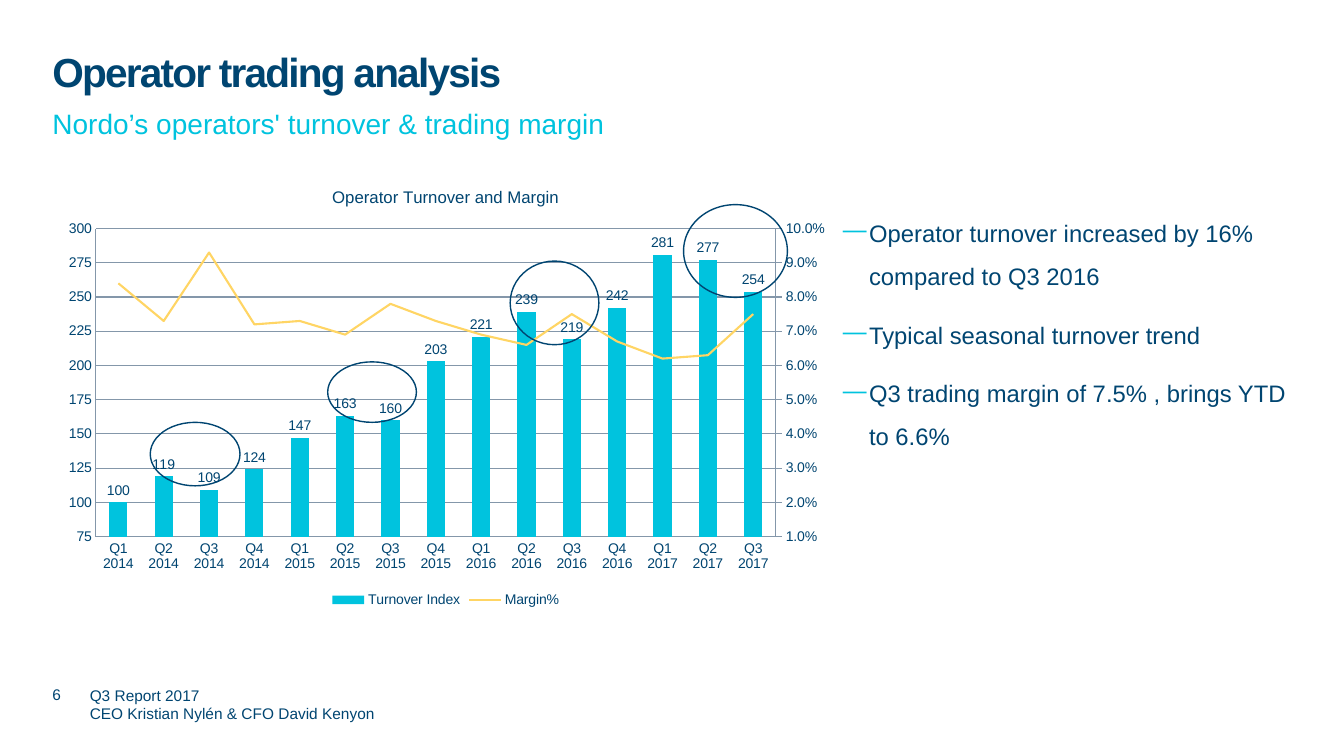
from dataclasses import dataclass

from pptx import Presentation
from pptx.chart.data import CategoryChartData
from pptx.dml.color import RGBColor
from pptx.enum.chart import XL_CHART_TYPE as ChartType, XL_LABEL_POSITION as LabelPosition
from pptx.enum.chart import XL_LEGEND_POSITION as LegendPosition, XL_MARKER_STYLE as MarkerStyle
from pptx.enum.chart import XL_TICK_MARK as TickMark
from pptx.enum.shapes import MSO_SHAPE as Preset
from pptx.enum.text import MSO_ANCHOR as Anchor
from pptx.oxml import parse_xml
from pptx.oxml.ns import nsdecls, qn
from pptx.util import Inches, Pt


@dataclass(frozen=True)
class Theme:
    font: str = "Arial"
    navy: str = "004571"
    cyan: str = "00C3DE"
    yellow: str = "FFD564"
    grid: str = "8497AA"
    title: float = 29
    subtitle: float = 20
    body: float = 17
    chart_title: float = 12
    footer: float = 11
    chart: float = 10


theme = Theme()


def set_font(font, size, color=theme.navy, bold=False):
    font.name = theme.font
    font.size = Pt(size)
    font.bold = bold
    font.color.rgb = RGBColor.from_string(color)


def add_text(text, box, size, color=theme.navy, bold=False, anchor=Anchor.TOP,
             line_spacing=None, space_after=0, tracking=None, bullet=None):
    """Add a text box with one paragraph per line of text."""
    frame = slide.shapes.add_textbox(*map(Inches, box)).text_frame
    frame.word_wrap = True
    frame.vertical_anchor = anchor
    frame.margin_left = frame.margin_right = frame.margin_top = frame.margin_bottom = 0
    for index, line in enumerate(text.split("\n")):
        paragraph = frame.paragraphs[0] if index == 0 else frame.add_paragraph()
        paragraph.line_spacing = line_spacing
        paragraph.space_after = Pt(space_after)
        if bullet:
            properties = paragraph._p.get_or_add_pPr()
            properties.set("marL", str(Inches(0.26)))
            properties.set("indent", str(Inches(-0.26)))
            properties.append(parse_xml(
                f'<a:buClr {nsdecls("a")}><a:srgbClr val="{theme.cyan}"/></a:buClr>'))
            properties.append(parse_xml(f'<a:buChar {nsdecls("a")} char="{bullet}"/>'))
        run = paragraph.add_run()
        run.text = line
        set_font(run.font, size, color, bold)
        if tracking:
            run._r.get_or_add_rPr().set("spc", str(round(tracking * 100)))


presentation = Presentation()
presentation.slide_width = Inches(13.33)
presentation.slide_height = Inches(7.5)
slide = presentation.slides.add_slide(presentation.slide_layouts[6])

# Headings, bullets and footer
add_text("Operator trading analysis", (0.52, 0.52, 10.5, 0.37), theme.title,
         bold=True, line_spacing=0.9, tracking=-1.3)
add_text("Nordo’s operators' turnover & trading margin", (0.52, 1.02, 10.5, 0.52),
         theme.subtitle, color=theme.cyan, line_spacing=Pt(26.7))
add_text("Operator turnover increased by 16% compared to Q3 2016\n"
         "Typical seasonal turnover trend\n"
         "Q3 trading margin of 7.5% , brings YTD to 6.6%",
         (8.36, 2.03, 4.44, 4.46), theme.body, line_spacing=1.5, space_after=11.3, bullet="―")
add_text("6", (0.52, 6.77, 0.37, 0.21), theme.footer, anchor=Anchor.BOTTOM)
add_text("Q3 Report 2017\nCEO Kristian Nylén & CFO David Kenyon",
         (0.89, 6.96, 5.25, 0.21), theme.footer, anchor=Anchor.BOTTOM)

# Turnover columns and margin line
quarters = [f"Q{quarter} {year}" for year in range(2014, 2018) for quarter in range(1, 5)][:15]
turnover = [100, 119, 109, 124, 147, 163, 160, 203, 221, 239, 219, 242, 281, 277, 254]
margin = [0.084, 0.073, 0.093, 0.072, 0.073, 0.069, 0.078, 0.073,
          0.069, 0.066, 0.075, 0.067, 0.062, 0.063, 0.075]
chart_data = CategoryChartData()
chart_data.categories = quarters
chart_data.add_series("Turnover Index", turnover, number_format="0")
chart_data.add_series("Margin%", margin, number_format="0.0%")
chart = slide.shapes.add_chart(ChartType.COLUMN_CLUSTERED, Inches(0.52), Inches(1.68),
                               Inches(7.8), Inches(4.39), chart_data).chart
set_font(chart.font, theme.chart)
chart.has_title = True
chart.chart_title.include_in_layout = False
chart_title = chart.chart_title.text_frame
chart_title.text = "Operator Turnover and Margin"
set_font(chart_title.paragraphs[0].runs[0].font, theme.chart_title)
chart.has_legend = True
chart.legend.position = LegendPosition.BOTTOM
chart.legend.include_in_layout = False
set_font(chart.legend.font, theme.chart)

value_axis = chart.value_axis
value_axis.minimum_scale, value_axis.maximum_scale, value_axis.major_unit = 75, 300, 25
value_axis.tick_labels.number_format = "0"
value_axis.tick_labels.number_format_is_linked = False
value_axis.has_major_gridlines = True
for axis in (chart.category_axis, value_axis):
    axis.major_tick_mark = axis.minor_tick_mark = TickMark.NONE
    set_font(axis.tick_labels.font, theme.chart)
for line in (chart.category_axis.format.line, value_axis.format.line,
             value_axis.major_gridlines.format.line):
    line.color.rgb = RGBColor.from_string(theme.grid)
    line.width = Pt(0.75)

columns = chart.plots[0]
columns.gap_width = 150
columns.vary_by_categories = False
turnover_series = columns.series[0]
turnover_series.format.fill.solid()
turnover_series.format.fill.fore_color.rgb = RGBColor.from_string(theme.cyan)
labels = turnover_series.data_labels
labels.show_value = True
labels.number_format = "0"
labels.number_format_is_linked = False
labels.position = LabelPosition.OUTSIDE_END
set_font(labels.font, theme.chart)

# The margin series moves to a line plot on its own right-hand axis
plot_area = chart._chartSpace.chart.plotArea
bar_chart = plot_area.find(qn("c:barChart"))
margin_element = bar_chart.findall(qn("c:ser"))[1]
for bar_setting in margin_element.findall(qn("c:invertIfNegative")):
    margin_element.remove(bar_setting)
line_chart = parse_xml(
    f'<c:lineChart {nsdecls("c")}><c:grouping val="standard"/><c:varyColors val="0"/>'
    '<c:marker val="1"/><c:axId val="5001"/><c:axId val="5002"/></c:lineChart>')
line_chart.insert(2, margin_element)
bar_chart.addnext(line_chart)
right_axis = parse_xml(
    f'<c:valAx {nsdecls("c", "a")}><c:axId val="5002"/><c:scaling>'
    '<c:orientation val="minMax"/><c:max val="0.1"/><c:min val="0.01"/></c:scaling>'
    '<c:delete val="0"/><c:axPos val="r"/><c:numFmt formatCode="0.0%" sourceLinked="0"/>'
    '<c:majorTickMark val="out"/><c:minorTickMark val="none"/><c:tickLblPos val="nextTo"/>'
    f'<c:spPr><a:ln w="9525"><a:solidFill><a:srgbClr val="{theme.grid}"/></a:solidFill></a:ln>'
    '</c:spPr><c:crossAx val="5001"/><c:crosses val="max"/><c:crossBetween val="between"/>'
    '<c:majorUnit val="0.01"/></c:valAx>')
hidden_axis = parse_xml(
    f'<c:catAx {nsdecls("c")}><c:axId val="5001"/><c:scaling><c:orientation val="minMax"/>'
    '</c:scaling><c:delete val="1"/><c:axPos val="b"/><c:majorTickMark val="none"/>'
    '<c:minorTickMark val="none"/><c:tickLblPos val="nextTo"/><c:crossAx val="5002"/>'
    '<c:crosses val="autoZero"/></c:catAx>')
plot_area.find(qn("c:valAx")).addnext(right_axis)
right_axis.addnext(hidden_axis)
margin_series = chart.plots[1].series[0]
margin_series.smooth = False
margin_series.marker.style = MarkerStyle.NONE
margin_series.format.line.color.rgb = RGBColor.from_string(theme.yellow)
margin_series.format.line.width = Pt(1.5)

for layout in plot_area.findall(qn("c:layout")):
    plot_area.remove(layout)
plot_area.insert(0, parse_xml(
    f'<c:layout {nsdecls("c")}><c:manualLayout><c:layoutTarget val="inner"/>'
    '<c:xMode val="edge"/><c:yMode val="edge"/><c:x val="0.055"/><c:y val="0.134"/>'
    '<c:w val="0.865"/><c:h val="0.696"/></c:manualLayout></c:layout>'))

# Rings around each year's Q2 to Q3 step
for box in ((6.78, 2.03, 1.03, 0.92), (5.06, 2.59, 0.88, 0.83),
            (3.25, 3.59, 0.88, 0.6), (1.49, 4.19, 0.89, 0.63)):
    ring = slide.shapes.add_shape(Preset.OVAL, *map(Inches, box))
    ring.shadow.inherit = False
    ring.fill.background()
    ring.line.color.rgb = RGBColor.from_string(theme.navy)
    ring.line.width = Pt(1)

presentation.save("out.pptx")
